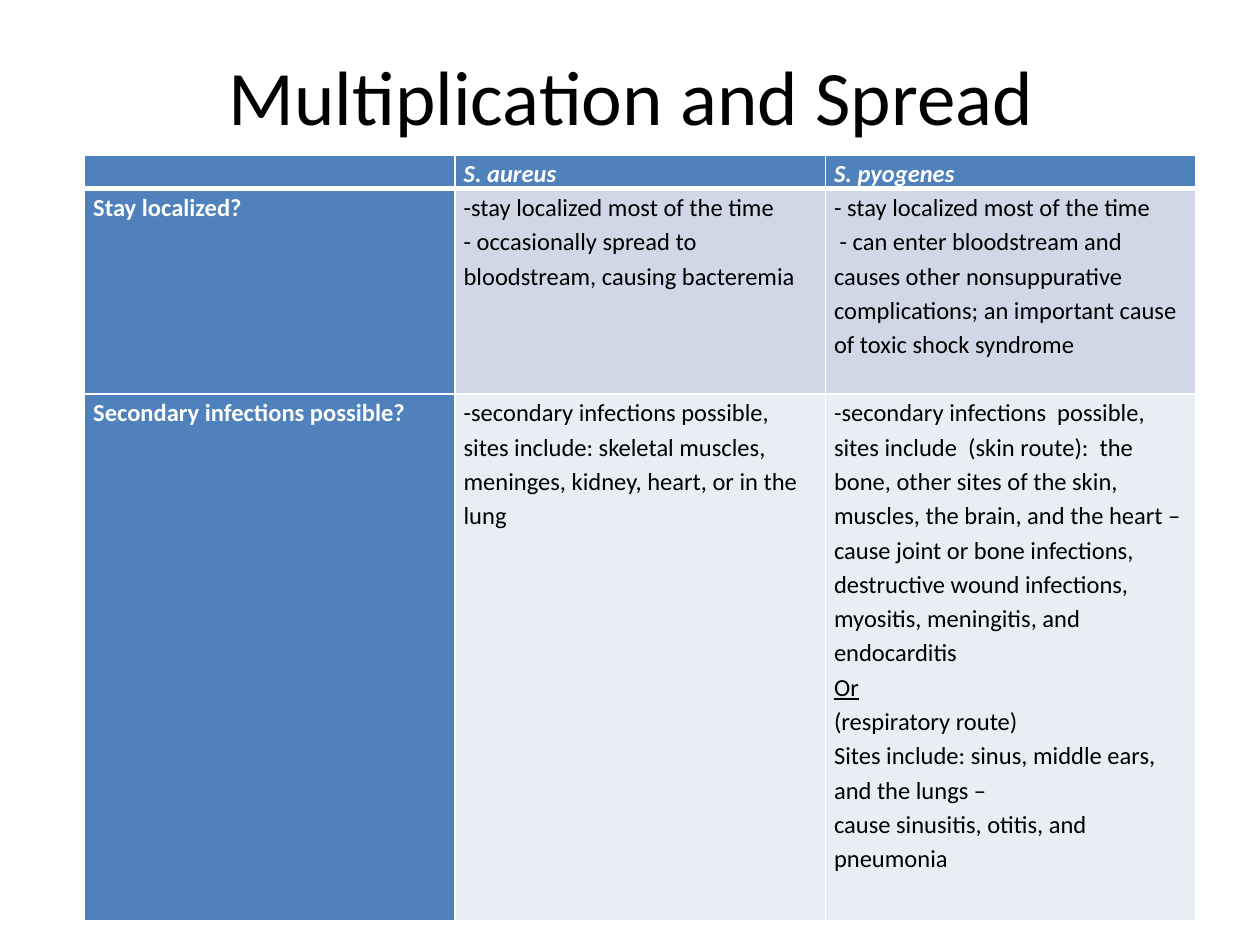
from dataclasses import dataclass

from lxml.etree import SubElement
from pptx import Presentation
from pptx.dml.color import RGBColor
from pptx.enum.text import MSO_ANCHOR, PP_ALIGN
from pptx.oxml.ns import qn
from pptx.slide import Slide
from pptx.util import Inches, Pt

COLORS = {
    "text": "000000",
    "white": "FFFFFF",
    "header": "4F81BD",
    "band_dark": "D0D8E8",
    "band_light": "E9EDF4",
}
BAND_FILLS = ["header", "band_dark", "band_light"]
ROW_HEIGHTS = [0.26, 1.63, 4.18]
COLUMN_WIDTH = 2.94
COMPARISON = [
    ["", "S. aureus", "S. pyogenes"],
    [
        "Stay localized?",
        "-stay localized most of the time\n"
        "- occasionally spread to bloodstream, causing bacteremia",
        "- stay localized most of the time\n"
        " - can enter bloodstream and causes other nonsuppurative "
        "complications; an important cause of toxic shock syndrome",
    ],
    [
        "Secondary infections possible?",
        "-secondary infections possible, sites include: skeletal muscles, "
        "meninges, kidney, heart, or in the lung",
        "-secondary infections  possible, sites include  (skin route):  the bone, "
        "other sites of the skin, muscles, the brain, and the heart –cause joint "
        "or bone infections, destructive wound infections, myositis, meningitis, "
        "and endocarditis\n"
        "Or\n"
        "(respiratory route)\n"
        "Sites include: sinus, middle ears, and the lungs –\n"
        "cause sinusitis, otitis, and pneumonia",
    ],
]


@dataclass
class SlideBuilder:
    """Holds the style and the current slide, and draws its elements."""

    slide: Slide
    font_name: str = "Calibri"
    title_size: int = 44
    body_size: int = 14
    line_spacing: float = 1.15

    def style_run(self, run, size, color, bold=False, italic=False):
        """Set the look of one run."""
        run.font.name = self.font_name
        run.font.size = Pt(size)
        run.font.bold = bold
        run.font.italic = italic
        run.font.color.rgb = RGBColor.from_string(COLORS[color])

    def add_title(self, wording, left, top, width, height):
        """Add the centred title."""
        title = self.slide.shapes.add_textbox(
            Inches(left), Inches(top), Inches(width), Inches(height)
        )
        frame = title.text_frame
        frame.word_wrap = True
        frame.vertical_anchor = MSO_ANCHOR.MIDDLE
        frame.text = wording
        heading = frame.paragraphs[0]
        heading.alignment = PP_ALIGN.CENTER
        self.style_run(heading.runs[0], self.title_size, "text")

    def set_borders(self, cell, bottom_width):
        """Draw white borders around a cell."""
        properties = cell._tc.get_or_add_tcPr()
        for side, width in zip("LRTB", [1, 1, 1, bottom_width]):
            border = SubElement(properties, qn(f"a:ln{side}"), w=str(Pt(width)))
            fill = SubElement(border, qn("a:solidFill"))
            SubElement(fill, qn("a:srgbClr"), val=COLORS["white"])

    def fill_cell(self, cell, wording, fill, heading, italic):
        """Write and colour one cell."""
        cell.margin_left = cell.margin_right = Inches(0.07)
        cell.margin_top = cell.margin_bottom = 0
        self.set_borders(cell, 3 if italic else 1)
        cell.fill.solid()
        cell.fill.fore_color.rgb = RGBColor.from_string(COLORS[fill])
        cell.text_frame.text = wording
        for paragraph in cell.text_frame.paragraphs:
            paragraph.line_spacing = self.line_spacing
            for run in paragraph.runs:
                color = "white" if heading else "text"
                self.style_run(run, self.body_size, color, heading, italic)
                run.font.underline = run.text == "Or"
            if not paragraph.runs:
                SubElement(
                    paragraph._p, qn("a:endParaRPr"), sz=str(self.body_size * 100)
                )

    def add_comparison(self, rows, left, top):
        """Add the table with a header row and a header column."""
        column_count = len(rows[0])
        table = self.slide.shapes.add_table(
            len(rows), column_count, Inches(left), Inches(top),
            Inches(COLUMN_WIDTH * column_count), Inches(sum(ROW_HEIGHTS)),
        ).table
        table.horz_banding = False
        for column in table.columns:
            column.width = Inches(COLUMN_WIDTH)
        for row_index, wordings in enumerate(rows):
            table.rows[row_index].height = Inches(ROW_HEIGHTS[row_index])
            for column_index, wording in enumerate(wordings):
                heading = row_index == 0 or column_index == 0
                fill = "header" if heading else BAND_FILLS[row_index]
                self.fill_cell(
                    table.cell(row_index, column_index), wording, fill,
                    heading, italic=row_index == 0,
                )


def main():
    """Build and save the slide."""
    presentation = Presentation()
    presentation.slide_width = Inches(10)
    presentation.slide_height = Inches(7.5)
    builder = SlideBuilder(presentation.slides.add_slide(presentation.slide_layouts[6]))
    builder.add_title("Multiplication and Spread", 0.51, 0.13, 9, 1.25)
    builder.add_comparison(COMPARISON, 0.67, 1.23)
    presentation.save("out.pptx")


if __name__ == "__main__":
    main()
